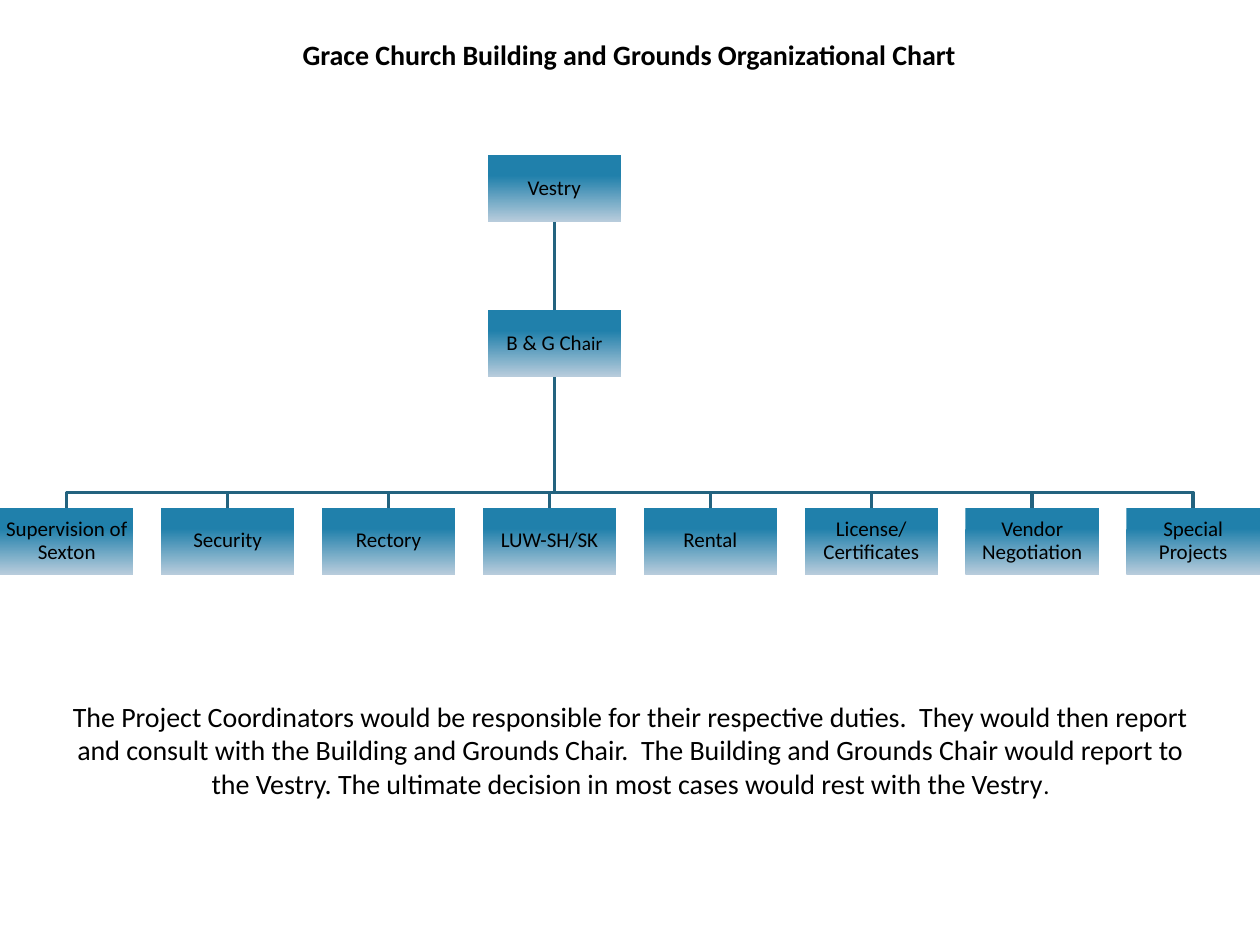
from pptx import Presentation
from pptx.dml.color import RGBColor
from pptx.enum.shapes import MSO_SHAPE
from pptx.enum.text import MSO_ANCHOR, PP_ALIGN
from pptx.util import Inches, Pt

RECT = MSO_SHAPE.RECTANGLE
TOP, MIDDLE = MSO_ANCHOR.TOP, MSO_ANCHOR.MIDDLE
CENTER = PP_ALIGN.CENTER
BLACK = RGBColor(0x00, 0x00, 0x00)
BLUE = RGBColor(0x20, 0x80, 0xAB)
PALE = RGBColor(0xB8, 0xCC, 0xDC)
LINE = RGBColor(0x23, 0x63, 0x7F)

DUTIES = ["Supervision of Sexton", "Security", "Rectory", "LUW-SH/SK", "Rental",
          "License/Certificates", "Vendor Negotiation", "Special Projects"]
BODY = ("The Project Coordinators would be responsible for their respective duties.  "
        "They would then report and consult with the Building and Grounds Chair.  "
        "The Building and Grounds Chair would report to the Vestry. "
        "The ultimate decision in most cases would rest with the Vestry")


def write(sp, *runs, bold=False, anchor=TOP, inset=None, spacing=None):
    tf = sp.text_frame
    tf.word_wrap = True
    tf.vertical_anchor = anchor
    if inset is not None:
        tf.margin_left = tf.margin_right = tf.margin_top = tf.margin_bottom = inset
    p = tf.paragraphs[0]
    p.alignment = CENTER
    if spacing:
        p.line_spacing = spacing
    for text, size in runs:
        r = p.add_run()
        r.text = text
        r.font.size = Pt(size)
        r.font.name = "Calibri"
        r.font.bold = bold
        r.font.color.rgb = BLACK


prs = Presentation()
prs.slide_width, prs.slide_height = Inches(10), Inches(7.5)
W = prs.slide_width
s = prs.slides.add_slide(prs.slide_layouts[5])

title = s.shapes.title
title.left, title.top, title.width, title.height = Inches(0.12), Inches(0.25), Inches(9.75), Inches(0.62)
write(title, ("Grace Church Building and Grounds Organizational Chart", 16), bold=True)

box_w, box_h = Inches(1.06), Inches(0.53)
pitch = (W - box_w) // (len(DUTIES) - 1)
trunk_left = Inches(3.87)
vestry_top, chair_top, duty_top = Inches(1.23), Inches(2.46), Inches(4.03)
trunk_x = trunk_left + box_w // 2
bus_y = duty_top - Inches(0.12)

for col in reversed(range(len(DUTIES))):
    x = col * pitch + box_w // 2
    fb = s.shapes.build_freeform(trunk_x, vestry_top + box_h)
    fb.add_line_segments([(trunk_x, bus_y), (x, bus_y), (x, duty_top)], close=False)
    sp = fb.convert_to_shape()
    sp.shadow.inherit = False
    sp.fill.background()
    sp.line.color.rgb = LINE
    sp.line.width = Pt(2)

boxes = [(trunk_left, vestry_top, [("Vestry", 12)])]
boxes += [(col * pitch, duty_top, [(duty, 12)]) for col, duty in enumerate(DUTIES)]
boxes.append((trunk_left, chair_top, [("B & G Ch", 12), ("air", 11)]))

for left, top, runs in boxes:
    sp = s.shapes.add_shape(RECT, left, top, box_w, box_h)
    sp.shadow.inherit = False
    sp.line.fill.background()
    sp.fill.gradient()
    sp.fill.gradient_angle = 270
    for stop, position, color in zip(sp.fill.gradient_stops, (0.31, 1), (BLUE, PALE)):
        stop.position = position
        stop.color.rgb = color
    write(sp, *runs, anchor=MIDDLE, inset=Inches(0.01), spacing=0.9)

note = s.shapes.add_textbox(Inches(0.38), Inches(5.5), Inches(9.25), Inches(1.75))
write(note, (BODY, 16), (".", 14))

prs.save("out.pptx")
